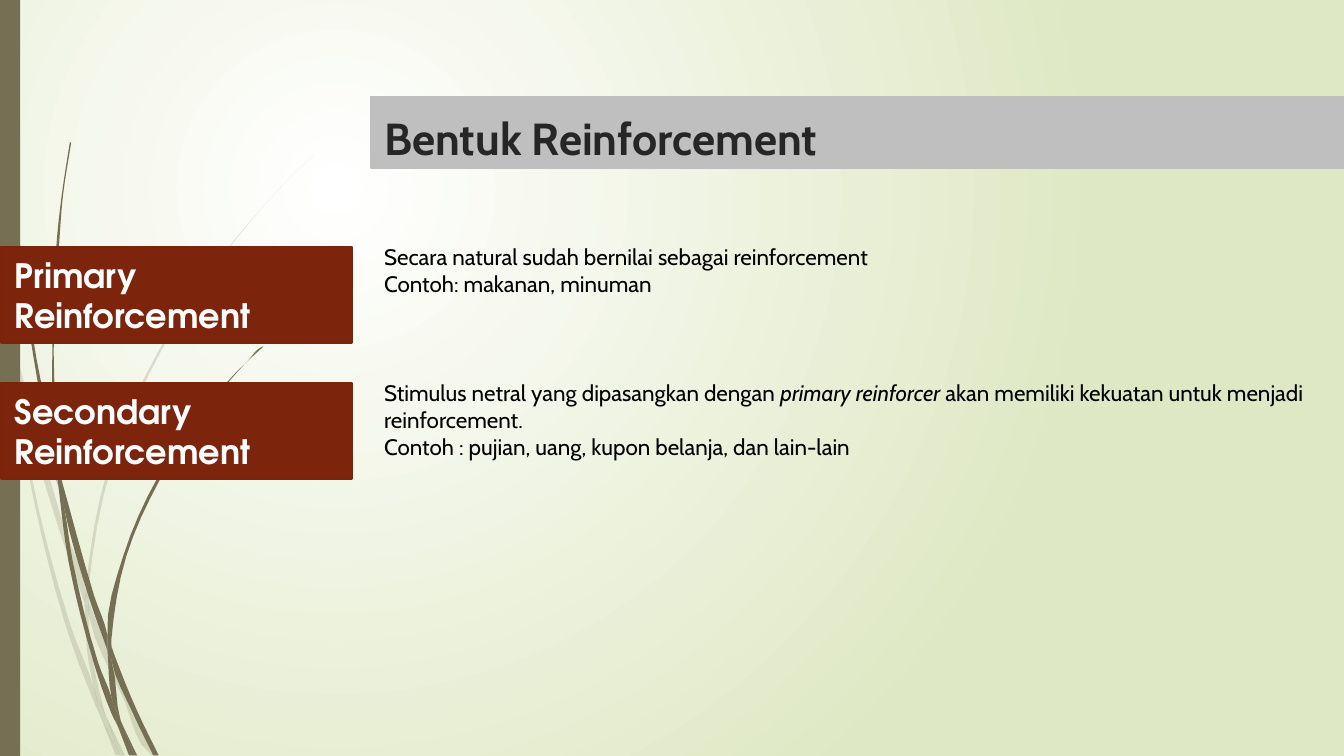
from lxml import etree
from pptx import Presentation, util as u
from pptx.dml.color import RGBColor
from pptx.enum import shapes, text
from pptx.oxml.ns import qn

WIDTH = 10
HEIGHT = WIDTH * 9 / 16
LABEL_LEFT, LABEL_WIDTH, LABEL_HEIGHT = 0.01, 2.61, 0.71
BODY_LEFT = 2.76
BODY_WIDTH = WIDTH - BODY_LEFT
FIRST_ROW, ROW_STEP, BODY_RISE = 1.84, 1.01, 0.08
BODY_FONT, LABEL_FONT = "Cabin", "TeX Gyre Adventor"

COLORS = {
    "white": "FFFFFF", "sage": "DFE8C4", "olive": "766F54", "rust": "7C240C",
    "rust_edge": "7A240C", "gray": "BFBFBF", "ink": "262626", "black": "000000",
}

PALE_BLADES = [
    [(0.08, 2.63), (0.06, 2.41), (0, 2.11), (0, 2.24), (0.08, 2.58)],
    [(0.43, 3.91), (0.63, 4.49), (0.64, 4.4), (0.47, 3.9), (0.11, 2.59), (0.13, 2.82)],
    [(0.69, 4.55), (0.66, 4.47), (0.66, 4.58), (0.92, 5.2), (1.13, 5.62), (1.16, 5.62), (0.95, 5.19)],
    [(0.89, 5.62), (0.93, 5.62), (0.79, 5.33)],
    [(0.7, 5.12), (0.52, 4.64), (0.23, 3.52), (0.13, 2.82), (0.08, 2.63), (0.21, 3.52),
     (0.49, 4.66), (0.69, 5.2), (0.76, 5.36), (0.74, 5.3)],
    [(0.63, 4.49), (0.65, 4.85), (0.7, 5.12), (0.72, 5.19), (0.79, 5.33), (0.78, 5.3),
     (0.68, 4.84), (0.66, 4.58), (0.66, 4.56)],
    [(0.66, 4.38), (0.83, 3.47), (1.2, 2.61), (1.71, 1.84), (2.01, 1.48), (2.17, 1.31),
     (2.34, 1.15), (2.17, 1.31), (2.01, 1.48), (1.71, 1.83), (1.18, 2.61), (0.81, 3.46),
     (0.64, 4.38), (0.64, 4.4), (0.66, 4.47)],
    [(0.76, 5.36), (0.86, 5.62), (0.89, 5.62)],
    [(0.66, 4.56), (0.66, 4.58), (0.66, 4.47), (0.64, 4.4), (0.63, 4.49)],
    [(0.72, 5.19), (0.7, 5.12), (0.74, 5.3), (0.76, 5.36), (0.89, 5.62), (0.79, 5.33)],
]

DARK_BLADES = [
    [(0.05, 0.82), (0.12, 1.75), (0.25, 2.66), (0.42, 3.57), (0.43, 3.61), (0.41, 3.43), (0.41, 3.4),
     (0.27, 2.66), (0.14, 1.74), (0.06, 0.82), (0.03, 0.36), (0.03, 0), (0.02, 0), (0.03, 0.36)],
    [(0.66, 4.44), (0.8, 4.84), (0.8, 4.75), (0.8, 4.73), (0.7, 4.43), (0.45, 3.54), (0.48, 3.79)],
    [(0.85, 4.87), (0.83, 4.81), (0.83, 4.92), (0.99, 5.31), (1.14, 5.62), (1.18, 5.62), (1.02, 5.29)],
    [(0.83, 5.19), (0.73, 4.93), (0.54, 4.17), (0.48, 3.79), (0.43, 3.58), (0.51, 4.18),
     (0.7, 4.94), (0.83, 5.31), (0.88, 5.41), (0.87, 5.38)],
    [(0.45, 3.54), (0.44, 3.4), (0.4, 2.62), (0.44, 1.83), (0.47, 1.45), (0.53, 1.06),
     (0.52, 1.06), (0.46, 1.45), (0.42, 1.83), (0.39, 2.62), (0.41, 3.37)],
    [(1, 5.62), (1.02, 5.62), (0.91, 5.39)],
    [(0.43, 3.58), (0.48, 3.79), (0.45, 3.54), (0.41, 3.37), (0.41, 3.4)],
    [(0.83, 4.75), (0.94, 4.14), (1.19, 3.57), (1.53, 3.05), (1.73, 2.81), (1.84, 2.69),
     (1.96, 2.58), (1.95, 2.58), (1.84, 2.69), (1.73, 2.8), (1.53, 3.04), (1.17, 3.56),
     (0.92, 4.13), (0.8, 4.73), (0.83, 4.81)],
    [(0.88, 5.41), (0.96, 5.62), (0.98, 5.62)],
    [(0.8, 4.84), (0.83, 5.19), (0.87, 5.3), (0.91, 5.39), (0.9, 5.37), (0.83, 4.92), (0.81, 4.88)],
    [(0.8, 4.84), (0.81, 4.88), (0.83, 4.92), (0.83, 4.81), (0.8, 4.73), (0.8, 4.75)],
    [(0.87, 5.3), (0.83, 5.19), (0.87, 5.38), (0.88, 5.41), (0.98, 5.62), (1, 5.62), (0.91, 5.39)],
]

ROWS = [
    ("Primary Reinforcement", text.PP_ALIGN.JUSTIFY, [
        [("Secara natural sudah bernilai sebagai reinforcement", False)],
        [("Contoh: makanan, minuman", False)],
    ]),
    ("Secondary Reinforcement", text.PP_ALIGN.LEFT, [
        [("Stimulus netral yang dipasangkan dengan ", False), ("primary reinforcer ", True),
         ("akan memiliki kekuatan untuk menjadi reinforcement.", False)],
        [("Contoh : pujian, uang, kupon belanja, dan lain-lain", False)],
    ]),
]


def color(name):
    return RGBColor.from_string(COLORS[name])


def inches(*lengths):
    return [u.Inches(length) for length in lengths]


def paint(shape, fill, line=None, weight=1):
    shape.fill.solid()
    shape.fill.fore_color.rgb = color(fill)
    if line:
        shape.line.color.rgb = color(line)
        shape.line.width = u.Pt(weight)
    else:
        shape.line.fill.background()


def style(span, font, size, ink, bold=False, italic=False):
    span.font.name, span.font.size = font, u.Pt(size)
    span.font.color.rgb = color(ink)
    span.font.bold, span.font.italic = bold, italic


def add_glow(page):
    fill = page.background.fill
    fill.gradient()
    for stop, name, position in zip(fill.gradient_stops, ("white", "sage"), (0, 1)):
        stop.color.rgb = color(name)
        stop.position = position
    gradient = page.element.find(".//" + qn("a:gradFill"))
    gradient.remove(gradient.find(qn("a:lin")))
    circle = etree.SubElement(gradient, qn("a:path"), {"path": "circle"})
    etree.SubElement(circle, qn("a:fillToRect"), l="50000", t="50000", r="100000", b="100000")


def smooth(blade):
    knots = [complex(*point) for point in blade]
    chords = [end - start for start, end in zip(knots, knots[1:] + knots[:1])]
    units = [chord / abs(chord) for chord in chords]
    bends = [units[index - 1] + units[index] for index in range(len(units))]
    headings = [bend / abs(bend) if abs(bend) > 1.7 else None for bend in bends]
    curve = []
    for index, (start, chord) in enumerate(zip(knots, chords)):
        leave = (headings[index] or units[index]) * abs(chord)
        arrive = (headings[(index + 1) % len(knots)] or units[index]) * abs(chord)
        for t in (0, 0.25, 0.5, 0.75):
            spot = (start + chord * t * t * (3 - 2 * t)
                    + leave * t * (1 - t) ** 2 - arrive * t * t * (1 - t))
            curve.append(inches(spot.real, spot.imag))
    return curve


def add_grass(page, blades, opacity):
    group = page.shapes.add_group_shape()
    for blade in blades:
        points = smooth(blade)
        builder = group.shapes.build_freeform(*points[0])
        builder.add_line_segments(points[1:], close=True)
        shape = builder.convert_to_shape()
        shape.shadow.inherit = False
        paint(shape, "olive")
        if opacity < 100:
            tint = shape.element.spPr.find(".//" + qn("a:srgbClr"))
            etree.SubElement(tint, qn("a:alpha"), val=str(opacity * 1000))


def add_bar(page, left, top, width, height, fill, line=None, weight=1):
    bar = page.shapes.add_shape(shapes.MSO_SHAPE.RECTANGLE, *inches(left, top, width, height))
    bar.shadow.inherit = False
    paint(bar, fill, line, weight)
    return bar


def add_label(page, top, wording):
    label = add_bar(page, LABEL_LEFT, top, LABEL_WIDTH, LABEL_HEIGHT, "rust", "rust_edge", 1.25)
    frame = label.text_frame
    frame.text = wording
    frame.word_wrap = True
    frame.vertical_anchor = text.MSO_ANCHOR.MIDDLE
    frame.paragraphs[0].alignment = text.PP_ALIGN.LEFT
    style(frame.paragraphs[0].runs[0], LABEL_FONT, 18, "white", bold=True)


def add_description(page, top, height, alignment, lines):
    frame = page.shapes.add_textbox(*inches(BODY_LEFT, top, BODY_WIDTH, height)).text_frame
    frame.word_wrap = True
    frame.auto_size = text.MSO_AUTO_SIZE.SHAPE_TO_FIT_TEXT
    for index, line in enumerate(lines):
        para = frame.add_paragraph() if index else frame.paragraphs[0]
        para.alignment = alignment
        for wording, italic in line:
            span = para.add_run()
            span.text = wording
            style(span, BODY_FONT, 12, "black", italic=italic)


def set_title(page, wording):
    title = page.shapes.title
    title.left, title.top, title.width, title.height = inches(BODY_LEFT, 0.72, BODY_WIDTH, 0.53)
    paint(title, "gray", "gray", 0.75)
    frame = title.text_frame
    frame.text = wording
    frame.word_wrap = True
    frame.auto_size = text.MSO_AUTO_SIZE.NONE
    frame.vertical_anchor = text.MSO_ANCHOR.TOP
    frame.margin_left = frame.margin_right = frame.margin_top = frame.margin_bottom = u.Inches(0.1)
    frame.paragraphs[0].alignment = text.PP_ALIGN.LEFT
    style(frame.paragraphs[0].runs[0], BODY_FONT, 24, "ink", bold=True)


def main():
    deck = Presentation()
    deck.slide_width, deck.slide_height = inches(WIDTH, HEIGHT)
    page = deck.slides.add_slide(deck.slide_layouts[5])
    add_glow(page)
    add_grass(page, PALE_BLADES, 20)
    add_grass(page, DARK_BLADES, 100)
    add_bar(page, 0, 0, 0.15, HEIGHT, "olive")
    set_title(page, "Bentuk Reinforcement")
    for index, (label, alignment, lines) in enumerate(ROWS):
        top = FIRST_ROW + index * ROW_STEP
        add_label(page, top, label)
        add_description(page, top - BODY_RISE, 0.5 + 0.21 * index, alignment, lines)
    deck.save("out.pptx")


if __name__ == "__main__":
    main()
